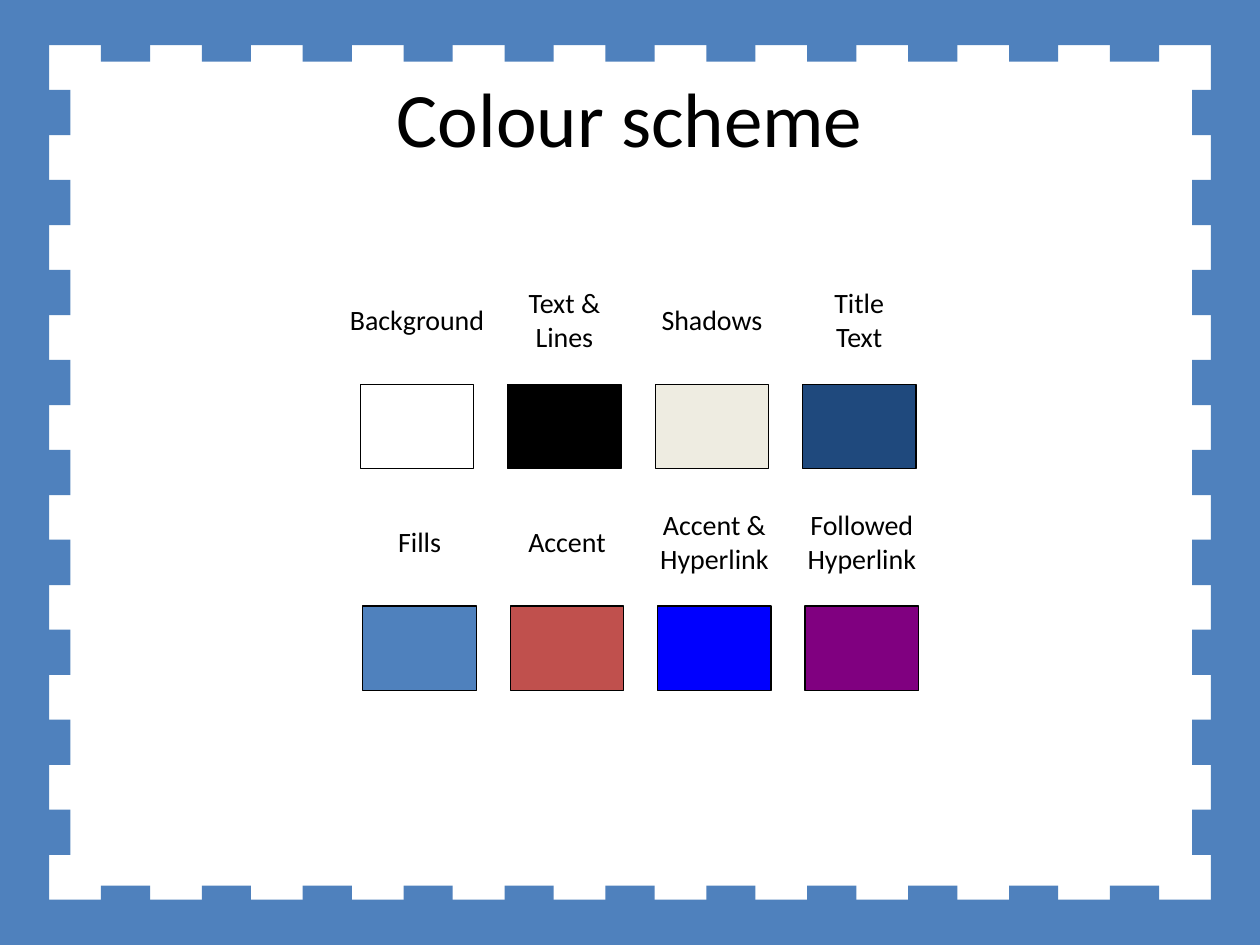
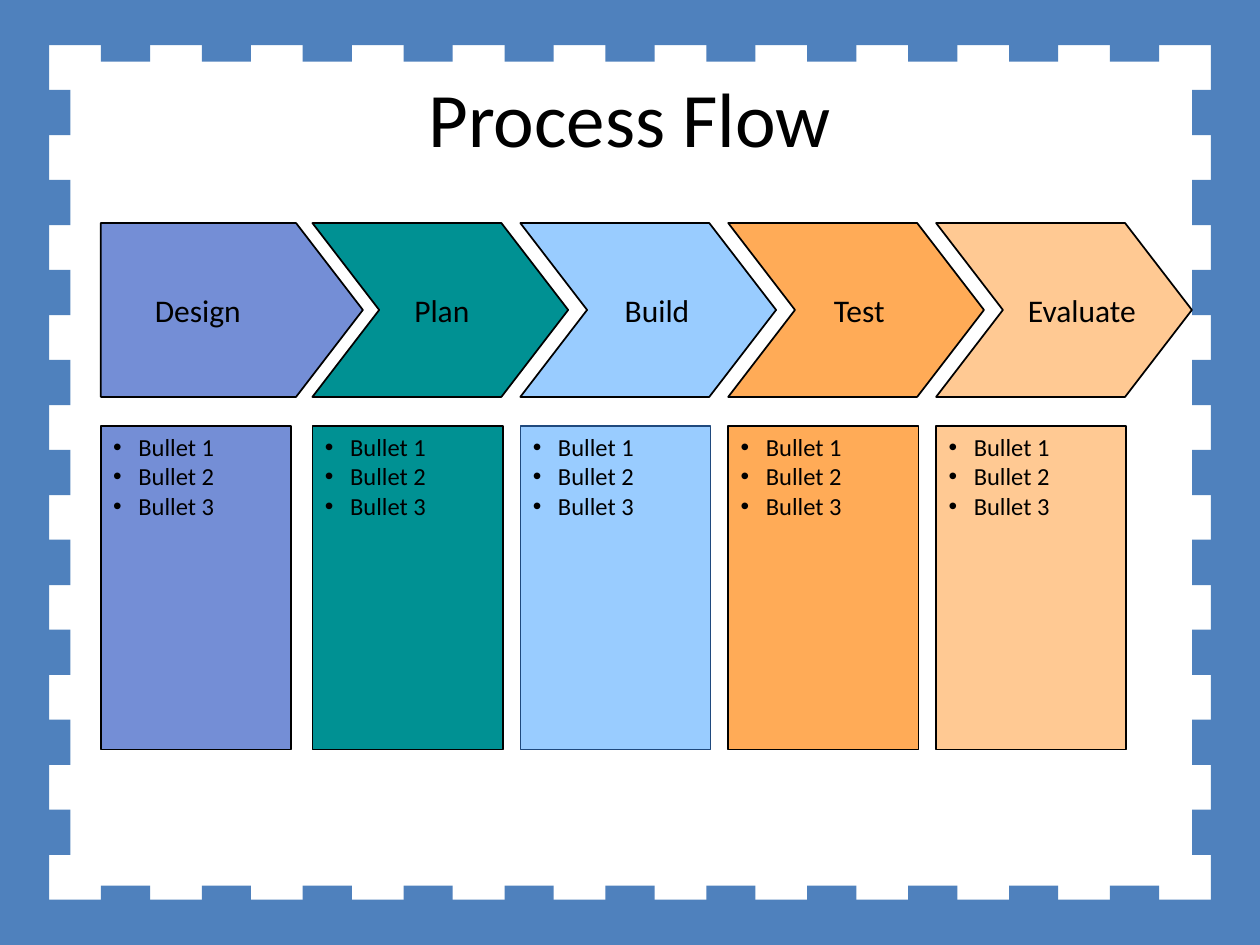
"""Build a colour scheme slide and a process flow slide inside a notched border."""
import lxml.etree
import pptx
import pptx.dml.color
import pptx.enum.shapes
import pptx.enum.text
import pptx.oxml.ns
import pptx.util

Inches = pptx.util.Inches
Pt = pptx.util.Pt
RGBColor = pptx.dml.color.RGBColor
PP_ALIGN = pptx.enum.text.PP_ALIGN
MSO_ANCHOR = pptx.enum.text.MSO_ANCHOR

FONT = "Calibri"
WHITE = RGBColor(0xFF, 0xFF, 0xFF)
BLACK = RGBColor(0x00, 0x00, 0x00)
CREAM = RGBColor(0xEE, 0xEC, 0xE1)
NAVY = RGBColor(0x1F, 0x49, 0x7D)
BLUE = RGBColor(0x4F, 0x81, 0xBD)
RED = RGBColor(0xC0, 0x50, 0x4D)
LINK_BLUE = RGBColor(0x00, 0x00, 0xFF)
PURPLE = RGBColor(0x80, 0x00, 0x80)
PERIWINKLE = RGBColor(0x74, 0x8E, 0xD6)
TEAL = RGBColor(0x00, 0x91, 0x93)
SKY = RGBColor(0x99, 0xCC, 0xFF)
ORANGE = RGBColor(0xFF, 0xAB, 0x57)
PEACH = RGBColor(0xFF, 0xC9, 0x93)

SLIDE_WIDTH, SLIDE_HEIGHT = 10, 7.5
BAND_HEIGHT, BAND_COUNT = 0.36, 11
STRIPE_WIDTH, STRIPE_COUNT = 0.39, 13


def add_box(slide, left, top, width, height, fill, line=None, weight=1):
    box = slide.shapes.add_shape(
        pptx.enum.shapes.MSO_SHAPE.RECTANGLE,
        Inches(left), Inches(top), Inches(width), Inches(height))
    box.shadow.inherit = False
    box.fill.solid()
    box.fill.fore_color.rgb = fill
    if line is None:
        box.line.fill.background()
    else:
        box.line.color.rgb = line
        box.line.width = Pt(weight)
    return box


def write(frame, text, size, alignment):
    frame.text = text
    for para in frame.paragraphs:
        para.alignment = alignment
        for span in para.runs:
            span.font.name = FONT
            span.font.size = Pt(size)
            span.font.color.rgb = BLACK


deck = pptx.Presentation()
deck.slide_width = Inches(SLIDE_WIDTH)
deck.slide_height = Inches(SLIDE_HEIGHT)

slides = []
for title in ("Colour scheme", "Process Flow"):
    slide = deck.slides.add_slide(deck.slide_layouts[6])
    band_pitch = (SLIDE_HEIGHT - BAND_HEIGHT) / (BAND_COUNT - 1)
    for row in range(BAND_COUNT):
        add_box(slide, 0, row * band_pitch, SLIDE_WIDTH, BAND_HEIGHT, BLUE)
    stripe_pitch = (SLIDE_WIDTH - STRIPE_WIDTH) / (STRIPE_COUNT - 1)
    for column in range(STRIPE_COUNT):
        add_box(slide, column * stripe_pitch, 0, STRIPE_WIDTH, SLIDE_HEIGHT, BLUE)
    add_box(slide, 0.56, 0.49, 8.9, 6.54, WHITE)
    title_box = slide.shapes.add_textbox(Inches(0.5), Inches(0.3), Inches(9), Inches(1.25))
    title_box.text_frame.word_wrap = True
    title_box.text_frame.vertical_anchor = MSO_ANCHOR.MIDDLE
    write(title_box.text_frame, title, 44, PP_ALIGN.CENTER)
    slides.append(slide)
colour_slide, process_slide = slides

swatch_rows = [
    (2.86, 3.05, [("Background", 1.39, WHITE), ("Text &\nLines", 0.84, BLACK),
                  ("Shadows", 1.11, CREAM), ("Title\vText", 0.63, NAVY)]),
    (2.88, 4.81, [("Fills", 0.59, BLUE), ("Accent", 0.88, RED),
                  ("Accent &\nHyperlink", 1.12, LINK_BLUE),
                  ("Followed\nHyperlink", 1.12, PURPLE)]),
]
swatch_width, swatch_height, swatch_pitch = 0.9, 0.67, 1.17
for row_left, swatch_top, swatches in swatch_rows:
    for column, (name, label_width, colour) in enumerate(swatches):
        swatch_left = row_left + column * swatch_pitch
        add_box(colour_slide, swatch_left, swatch_top, swatch_width, swatch_height,
                colour, BLACK, 0.75)
        label_height = 0.37 if len(name.split()) == 1 else 0.64
        label = colour_slide.shapes.add_textbox(
            Inches(swatch_left + (swatch_width - label_width) / 2),
            Inches(swatch_top - 0.51 - label_height / 2),
            Inches(label_width), Inches(label_height))
        label.text_frame.word_wrap = False
        label.text_frame.auto_size = pptx.enum.text.MSO_AUTO_SIZE.SHAPE_TO_FIT_TEXT
        write(label.text_frame, name, 16, PP_ALIGN.CENTER)

stages = [
    ("Design", 0.8, 1.13, 0.98, PERIWINKLE, BLACK),
    ("Plan", 2.48, 3.19, 0.7, TEAL, BLACK),
    ("Build", 4.13, 4.86, 0.76, SKY, NAVY),
    ("Test", 5.78, 6.52, 0.69, ORANGE, BLACK),
    ("Evaluate", 7.43, 8.06, 1.17, PEACH, BLACK),
]
arrow_top, arrow_middle, arrow_bottom, arrow_depth = 1.77, 2.46, 3.15, 0.53
for stage, left, label_left, label_width, colour, box_line in stages:
    bullet_box = add_box(process_slide, left, 3.38, 1.51, 2.57, colour, box_line)
    bullet_box.text_frame.vertical_anchor = MSO_ANCHOR.TOP
    write(bullet_box.text_frame, "Bullet 1\nBullet 2\nBullet 3", 14, PP_ALIGN.LEFT)
    for para in bullet_box.text_frame.paragraphs:
        properties = para._p.get_or_add_pPr()
        properties.set("marL", str(Inches(0.2)))
        properties.set("indent", str(Inches(-0.2)))
        bullet_font = lxml.etree.SubElement(properties, pptx.oxml.ns.qn("a:buFont"))
        bullet_font.set("typeface", "Arial")
        bullet = lxml.etree.SubElement(properties, pptx.oxml.ns.qn("a:buChar"))
        bullet.set("char", "•")

    first = stage == "Design"
    shoulder = left + (1.55 if first else 1.5)
    outline = [(shoulder, arrow_top), (shoulder + arrow_depth, arrow_middle),
               (shoulder, arrow_bottom), (left, arrow_bottom)]
    if not first:
        outline.append((left + arrow_depth, arrow_middle))
    builder = process_slide.shapes.build_freeform(Inches(left), Inches(arrow_top))
    builder.add_line_segments([(Inches(x), Inches(y)) for x, y in outline], close=True)
    arrow = builder.convert_to_shape()
    arrow.shadow.inherit = False
    arrow.fill.solid()
    arrow.fill.fore_color.rgb = colour
    arrow.line.color.rgb = BLACK
    arrow.line.width = Pt(1)

    label = process_slide.shapes.add_textbox(
        Inches(label_left), Inches(2.26), Inches(label_width), Inches(0.4))
    label.text_frame.word_wrap = False
    label.text_frame.auto_size = pptx.enum.text.MSO_AUTO_SIZE.SHAPE_TO_FIT_TEXT
    write(label.text_frame, stage, 18, PP_ALIGN.LEFT)

deck.save("out.pptx")
